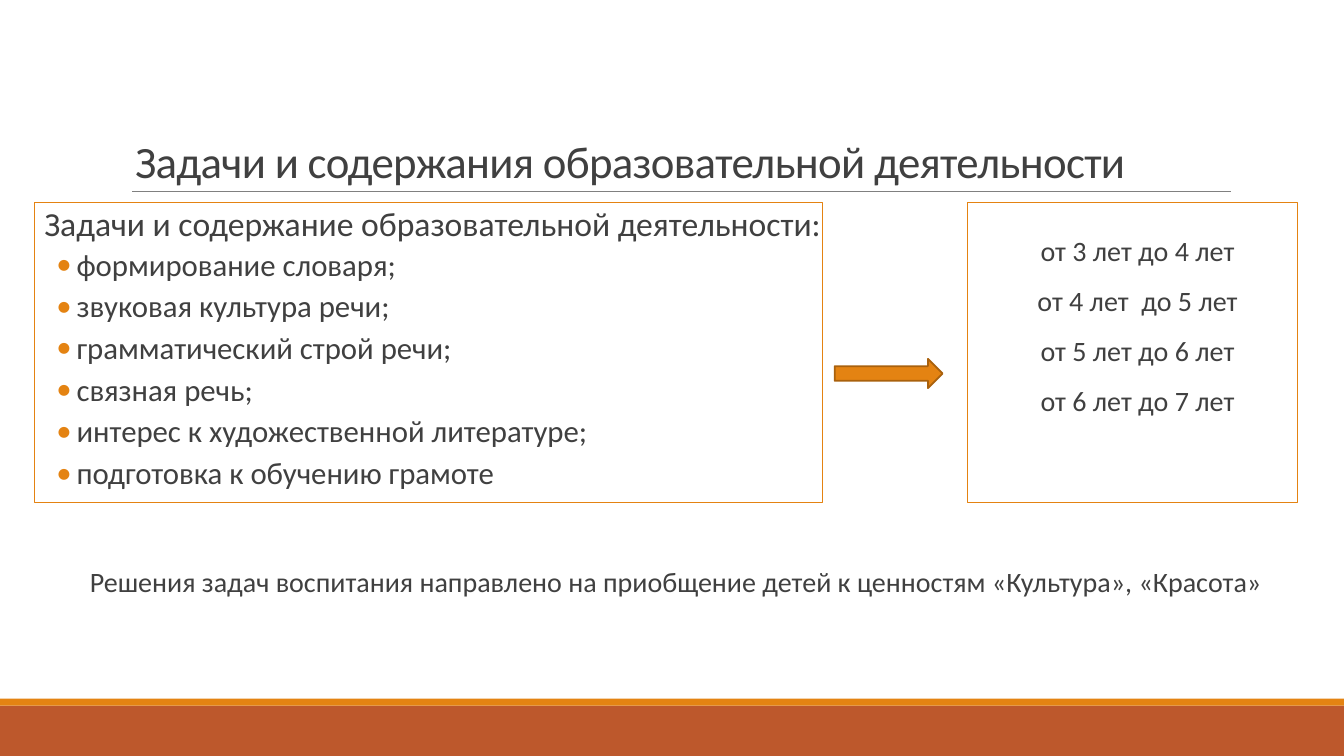
from pptx import Presentation
from pptx.dml.color import RGBColor
from pptx.enum.shapes import MSO_CONNECTOR, MSO_SHAPE
from pptx.enum.text import MSO_ANCHOR, PP_ALIGN
from pptx.oxml.ns import qn
from pptx.util import Inches, Pt
from lxml import etree

RECTANGLE, ARROW = MSO_SHAPE.RECTANGLE, MSO_SHAPE.RIGHT_ARROW
STRAIGHT = MSO_CONNECTOR.STRAIGHT
TOP, MIDDLE, BOTTOM = MSO_ANCHOR.TOP, MSO_ANCHOR.MIDDLE, MSO_ANCHOR.BOTTOM
LEFT, CENTER = PP_ALIGN.LEFT, PP_ALIGN.CENTER
TITLE_ONLY = 5

ORANGE, RUST, BROWN = "E48312", "BD582C", "A9610D"
INK, GRAY = "404040", "808080"


def color(value):
    return RGBColor.from_string(value)


def write(paragraph, text, size=20, align=LEFT, spacing=0.9, before=0, after=0,
          margin=0.0, hanging=0.0, bullet=None, tracking=None):
    """Fill one paragraph with text and its format."""
    properties = paragraph._p.get_or_add_pPr()
    properties.set("marL", str(Inches(margin)))
    properties.set("indent", str(-Inches(hanging)))
    paragraph.alignment = align
    paragraph.line_spacing = spacing
    paragraph.space_before, paragraph.space_after = Pt(before), Pt(after)
    if bullet:
        bullet_color = etree.SubElement(properties, qn("a:buClr"))
        etree.SubElement(bullet_color, qn("a:srgbClr"), val=ORANGE)
        etree.SubElement(properties, qn("a:buFont"), typeface="Calibri")
        etree.SubElement(properties, qn("a:buChar"), char=bullet)
    else:
        etree.SubElement(properties, qn("a:buNone"))
    run = paragraph.add_run()
    run.text = text
    run.font.name, run.font.size = "Calibri", Pt(size)
    run.font.color.rgb = color(INK)
    if tracking is not None:
        run.font._element.set("spc", str(round(tracking * 100)))


class SlideBuilder:
    """Places elements on a slide; lengths are percent of the slide's size."""

    def __init__(self, presentation):
        self.width = presentation.slide_width
        self.height = presentation.slide_height
        layout = presentation.slide_layouts[TITLE_ONLY]
        self.slide = presentation.slides.add_slide(layout)

    def place(self, left, top, width, height):
        return (round(self.width * left / 100), round(self.height * top / 100),
                round(self.width * width / 100), round(self.height * height / 100))

    def frame(self, shape, anchor, sides=0.0, bottom=0.05):
        text_frame = shape.text_frame
        text_frame.word_wrap = True
        text_frame.vertical_anchor = anchor
        text_frame.margin_left = text_frame.margin_right = Inches(sides)
        text_frame.margin_top = Inches(0.05)
        text_frame.margin_bottom = Inches(bottom)
        return text_frame

    def title(self, area, text):
        shape = self.slide.shapes.title
        shape.left, shape.top, shape.width, shape.height = self.place(*area)
        text_frame = self.frame(shape, BOTTOM, sides=0.1)
        write(text_frame.paragraphs[0], text, size=32, spacing=0.85, tracking=-0.5)

    def shape(self, kind, area, fill=None, line=None, line_width=0.75):
        shape = self.slide.shapes.add_shape(kind, *self.place(*area))
        shape.shadow.inherit = False
        if fill:
            shape.fill.solid()
            shape.fill.fore_color.rgb = color(fill)
        else:
            shape.fill.background()
        if line:
            shape.line.color.rgb = color(line)
            shape.line.width = Pt(line_width)
        else:
            shape.line.fill.background()
        return shape

    def rule(self, left, right, top):
        x1, y, x2, _ = self.place(left, top, right, 0)
        line = self.slide.shapes.add_connector(STRAIGHT, x1, y, x2, y)
        line.line.color.rgb = color(GRAY)
        line.line.width = Pt(0.5)
        etree.SubElement(line._element.spPr, qn("a:effectLst"))

    def text(self, area, text):
        box = self.slide.shapes.add_textbox(*self.place(*area))
        write(self.frame(box, MIDDLE).paragraphs[0], text, after=2, margin=0.1)


def main():
    presentation = Presentation()
    presentation.slide_width, presentation.slide_height = Inches(13.33), Inches(7.5)
    builder = SlideBuilder(presentation)

    # Footer bands and title with its rule
    builder.shape(RECTANGLE, (0, 93.33, 100, 6.67), fill=RUST)
    builder.shape(RECTANGLE, (0, 92.4, 100, 0.93), fill=ORANGE)
    builder.rule(9.83, 91.58, 25.33)
    builder.title((9.3, 8, 82.5, 17.47),
                  "Задачи и содержания образовательной деятельности")

    # Tasks panel
    panel_top, panel_height = 26.8, 39.73
    tasks = builder.shape(RECTANGLE, (2.55, panel_top, 58.65, panel_height), line=ORANGE)
    tasks_frame = builder.frame(tasks, TOP)
    write(tasks_frame.paragraphs[0], "Задачи и содержание образовательной деятельности:",
          size=24, after=2, margin=0.1)
    for task in ("формирование словаря;", "звуковая культура речи;",
                 "грамматический строй речи;", "связная речь;",
                 "интерес к художественной литературе;",
                 "подготовка к обучению грамоте"):
        write(tasks_frame.add_paragraph(), task, size=22, before=2, after=4,
              margin=0.42, hanging=0.2, bullet="•")

    # Arrow to the age groups
    builder.shape(ARROW, (62.1, 47.47, 8.03, 3.87), fill=ORANGE, line=BROWN, line_width=1.25)

    # Age groups panel
    ages = builder.shape(RECTANGLE, (72, panel_top, 24.53, panel_height), line=ORANGE)
    ages_frame = builder.frame(ages, MIDDLE, bottom=0.55)
    for index, age in enumerate(("от 3 лет до 4 лет", "от 4 лет  до 5 лет",
                                 "от 5 лет до 6 лет", "от 6 лет до 7 лет")):
        paragraph = ages_frame.add_paragraph() if index else ages_frame.paragraphs[0]
        write(paragraph, age, align=CENTER, before=12 if index else 0, after=2, margin=0.1)

    # Closing statement
    builder.text((5.93, 70.67, 89.25, 12.93),
                 "Решения задач воспитания направлено на приобщение детей "
                 "к ценностям «Культура», «Красота»")

    presentation.save("out.pptx")


if __name__ == "__main__":
    main()
